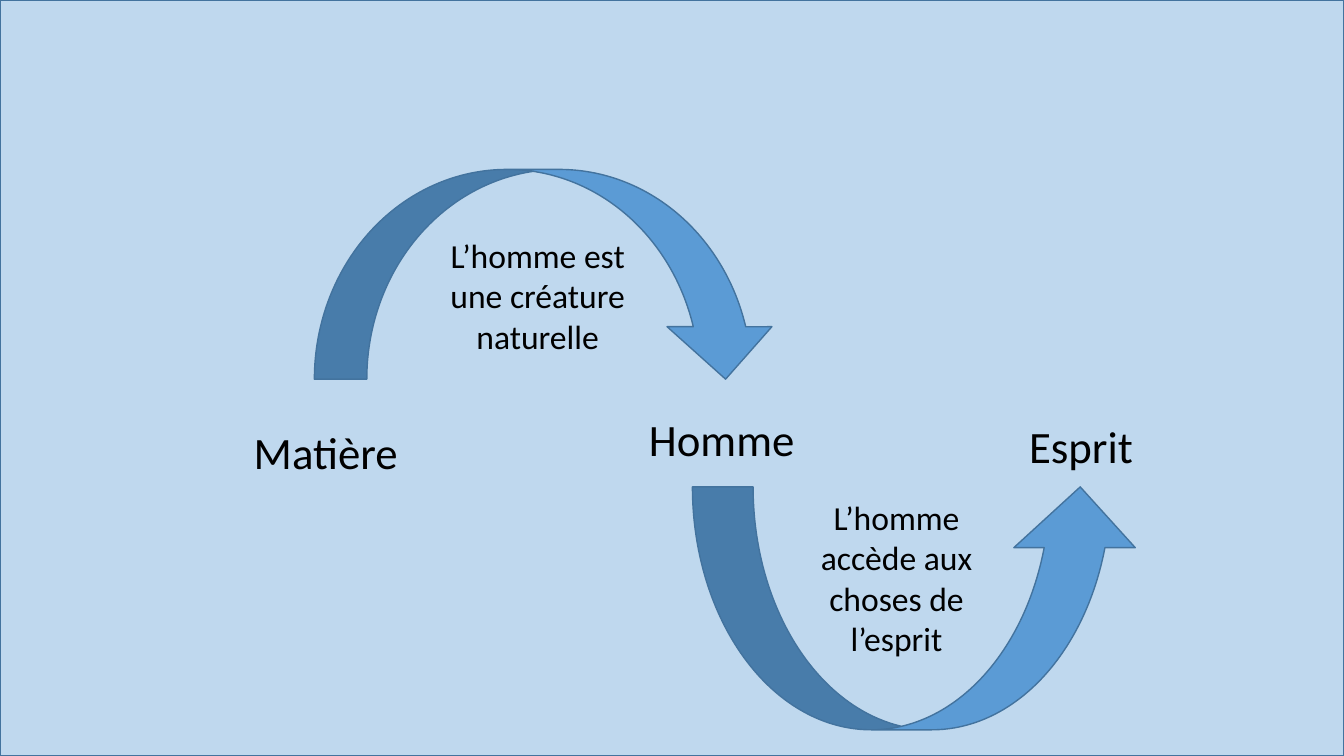
from lxml import etree
from pptx import Presentation
from pptx.dml.color import RGBColor
from pptx.enum import shapes, text
from pptx.oxml import ns
from pptx.util import Pt

WIDE, HIGH = 960, 540
BLUE = RGBColor(0x5B, 0x9B, 0xD5)
EDGE = RGBColor(0x43, 0x73, 0x9E)
BLACK = RGBColor(0, 0, 0)
KIND = shapes.MSO_SHAPE
LEFT, MID = text.PP_ALIGN.LEFT, text.PP_ALIGN.CENTER

# wording, box (left, top, width, height)
TERMS = [
    ("Esprit", (728, 295.2, 110.9, 46)),
    ("Homme", (456.5, 290.2, 156.2, 46)),
    ("Matière", (174.2, 299.5, 146.2, 46)),
]
# arrow box, flipped, wording, wording box
STEPS = [
    ((224.6, 121, 331.2, 149.8), False,
     "L’homme est une créature naturelle", (306, 164.2, 156.2, 94.5)),
    ((494.6, 347.8, 320.4, 173.5), True,
     "L’homme accède aux choses de l’esprit", (562.3, 351.4, 156.2, 123.6)),
]

deck = Presentation()
deck.slide_width, deck.slide_height = Pt(WIDE), Pt(HIGH)
slide = deck.slides.add_slide(deck.slide_layouts[6])


def draw(kind, box):
    shape = slide.shapes.add_shape(kind, *map(Pt, box))
    shape.shadow.inherit = False
    shape.fill.solid()
    shape.fill.fore_color.rgb = BLUE
    shape.line.color.rgb = EDGE
    shape.line.width = Pt(1)
    return shape


def write(words, box, size, align):
    frame = slide.shapes.add_textbox(*map(Pt, box)).text_frame
    frame.word_wrap = True
    para = frame.paragraphs[0]
    para.alignment = align
    run = para.add_run()
    run.text = words
    for name, value in {"name": "Calibri", "size": Pt(size)}.items():
        setattr(run.font, name, value)
    run.font.color.rgb = BLACK


back = draw(KIND.RECTANGLE, (0, 0, WIDE, HIGH))
tint = back._element.spPr.find(ns.qn("a:solidFill"))[0]
etree.SubElement(tint, ns.qn("a:alpha")).set("val", "39000")

for words, box in TERMS:
    write(words, box, 32, LEFT)

for box, flip, words, place in STEPS:
    arrow = draw(KIND.CURVED_DOWN_ARROW, box)
    if flip:
        arrow._element.spPr.find(ns.qn("a:xfrm")).set("flipV", "1")
    write(words, place, 24, MID)

deck.save("out.pptx")
